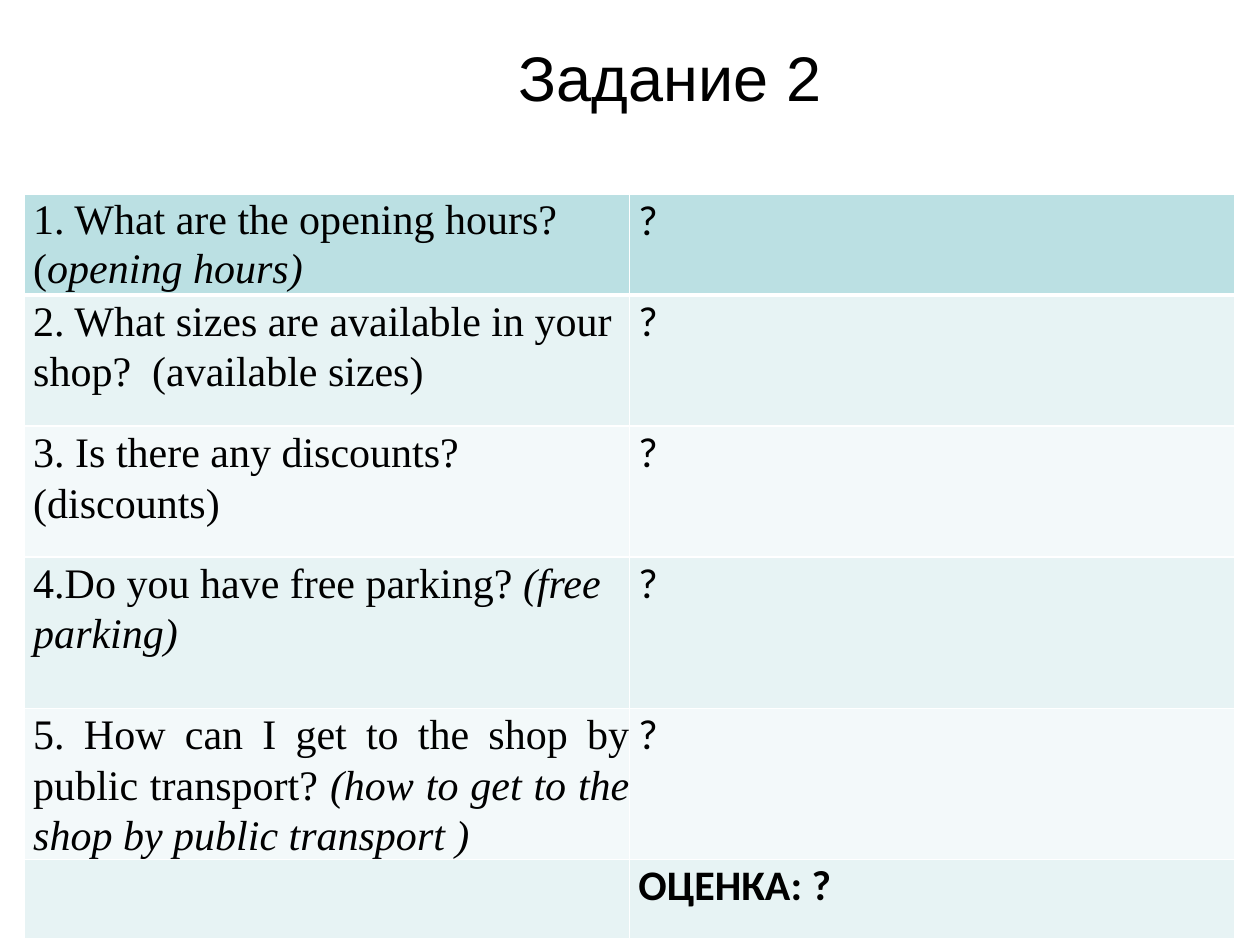
"""Build the task slide with a title and a table of questions."""
import pptx
import pptx.dml.color
import pptx.enum.dml
import pptx.enum.text
import pptx.oxml
import pptx.oxml.ns
import pptx.util

Cm = pptx.util.Cm
Pt = pptx.util.Pt
RGBColor = pptx.dml.color.RGBColor
PP_ALIGN = pptx.enum.text.PP_ALIGN

BLACK = RGBColor(0x00, 0x00, 0x00)
WHITE = RGBColor(0xFF, 0xFF, 0xFF)
HEADER = RGBColor(0xBB, 0xE0, 0xE3)
BAND_DARK = RGBColor(0xE7, 0xF3, 0xF4)
BAND_LIGHT = RGBColor(0xF3, 0xF9, 0xFA)

TITLE_FONT = {"name": "Arial", "size": Pt(36)}
QUESTION_FONT = {"name": "Times New Roman", "size": Pt(24)}
ANSWER_FONT = {"name": "Calibri", "size": Pt(24)}
ITALIC = {**QUESTION_FONT, "italic": True}
BOLD = {**ANSWER_FONT, "bold": True}

QUESTION_PARA = {"line_spacing": Pt(28.8), "space_before": Pt(0.1)}
HEADER_PARA = {"line_spacing": Pt(27.9)}
JUSTIFIED_PARA = {**QUESTION_PARA, "alignment": PP_ALIGN.JUSTIFY}
ANSWER_PARA = {"space_before": Pt(0.8)}

QUESTION_MARGINS = {"margin_left": Cm(0.18), "margin_top": 0,
                    "margin_right": 0, "margin_bottom": 0}
ANSWER_MARGINS = {**QUESTION_MARGINS, "margin_top": Cm(0.03)}

COLUMN_WIDTH = Cm(12.2)
ROWS = [
    (Cm(2.03), HEADER_PARA,
     [[("1. What are the opening hours? (", QUESTION_FONT),
       ("opening hours)", ITALIC)]], "?", ANSWER_FONT),
    (Cm(2.64), QUESTION_PARA,
     [[("2. What sizes are available in your shop?  (available sizes)",
        QUESTION_FONT)]], "?", ANSWER_FONT),
    (Cm(2.64), QUESTION_PARA,
     [[("3. Is there any discounts?", QUESTION_FONT)],
      [("(discounts)", QUESTION_FONT)]], "?", ANSWER_FONT),
    (Cm(3.05), QUESTION_PARA,
     [[("4.Do you have free parking? ", QUESTION_FONT),
       ("(free parking)", ITALIC)]], "?", ANSWER_FONT),
    (Cm(3.05), JUSTIFIED_PARA,
     [[("5. How can I get to the shop by public transport? ", QUESTION_FONT),
       ("(how to get to the shop by public transport )", ITALIC)]],
     "?", ANSWER_FONT),
    (Cm(1.6), QUESTION_PARA, [], "ОЦЕНКА: ?", BOLD),
]


def set_attrs(obj, values):
    """Set every attribute in a dict of format values."""
    for name, value in values.items():
        setattr(obj, name, value)


def write_text(tf, paragraphs, para_format):
    """Write paragraphs made of (text, font format) runs."""
    for i, runs in enumerate(paragraphs):
        p = tf.add_paragraph() if i else tf.paragraphs[0]
        set_attrs(p, para_format)
        for text, font_format in runs:
            r = p.add_run()
            r.text = text
            set_attrs(r.font, font_format)
            r.font.color.rgb = BLACK


def set_borders(cell, widths):
    """Draw white borders with the given width in points for each side."""
    tc_pr = cell._tc.get_or_add_tcPr()
    for i, (side, width) in enumerate(widths.items()):
        tc_pr.insert(i, pptx.oxml.parse_xml(
            f'<a:{side} {pptx.oxml.ns.nsdecls("a")} w="{Pt(width)}">'
            f'<a:solidFill><a:srgbClr val="{WHITE}"/></a:solidFill>'
            f'</a:{side}>'))


def format_cell(cell, color, margins, widths):
    """Apply fill, margins and borders to a cell."""
    cell.fill.solid()
    cell.fill.fore_color.rgb = color
    set_attrs(cell, margins)
    set_borders(cell, widths)


def add_title(s, text):
    """Add the slide title."""
    sp = s.shapes.add_textbox(Cm(10.21), Cm(0.74), Cm(6.65), Cm(1.57))
    tf = sp.text_frame
    set_attrs(tf, {**ANSWER_MARGINS, "margin_left": Cm(0.25),
                   "word_wrap": True,
                   "vertical_anchor": pptx.enum.text.MSO_ANCHOR.MIDDLE})
    write_text(tf, [[(text, TITLE_FONT)]], {"space_before": Pt(1)})


def add_question_table(s):
    """Add the table of questions and answers."""
    height = sum(row[0] for row in ROWS)
    table = s.shapes.add_table(len(ROWS), 2, Cm(0.49), Cm(3.92),
                               2 * COLUMN_WIDTH, height).table
    set_attrs(table, {"first_row": False, "horz_banding": False})
    for column in table.columns:
        column.width = COLUMN_WIDTH
    for i, (height, para, question, answer, font) in enumerate(ROWS):
        table.rows[i].height = height
        color = HEADER if i == 0 else BAND_DARK if i % 2 else BAND_LIGHT
        widths = {"lnL": 1, "lnR": 1, "lnT": 3 if i == 1 else 1,
                  "lnB": 3 if i == 0 else 1}
        left, right = table.cell(i, 0), table.cell(i, 1)
        format_cell(left, color, QUESTION_MARGINS, widths)
        format_cell(right, color, ANSWER_MARGINS, widths)
        write_text(left.text_frame, question, para)
        write_text(right.text_frame, [[(answer, font)]], ANSWER_PARA)


def main():
    """Create and save the presentation."""
    prs = pptx.Presentation()
    set_attrs(prs, {"slide_width": Cm(25.4), "slide_height": Cm(19.05)})
    s = prs.slides.add_slide(prs.slide_layouts[6])
    add_title(s, "Задание 2")
    add_question_table(s)
    prs.save("out.pptx")


if __name__ == "__main__":
    main()
